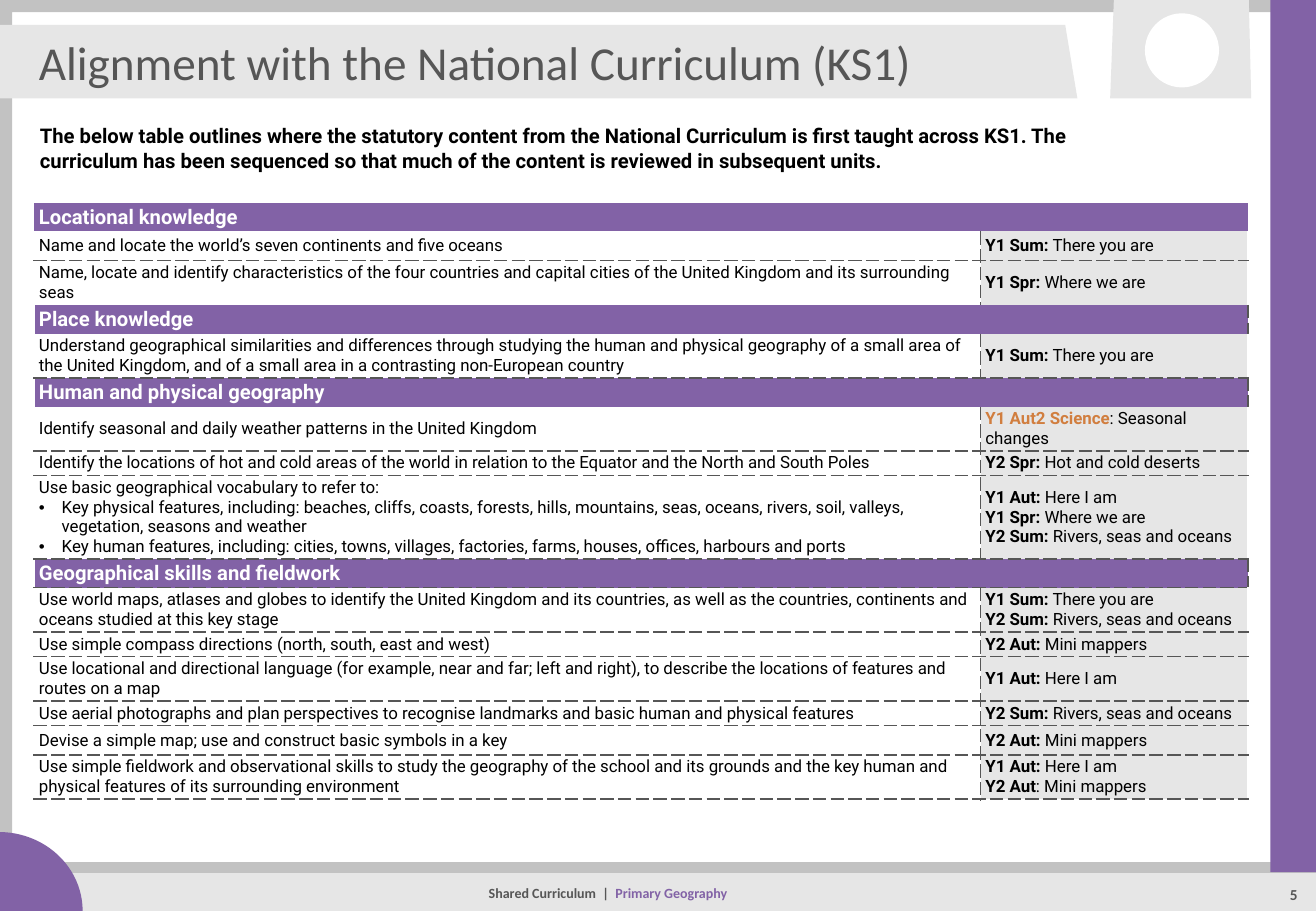
"""Builds the KS1 curriculum alignment slide."""
import dataclasses

import lxml.etree
import pptx
import pptx.dml.color
import pptx.enum.shapes
import pptx.enum.text
import pptx.oxml.ns
import pptx.util

Pt = pptx.util.Pt
qn = pptx.oxml.ns.qn
SHAPE = pptx.enum.shapes.MSO_SHAPE
ALIGN = pptx.enum.text.PP_ALIGN
ANCHOR = pptx.enum.text.MSO_ANCHOR


@dataclasses.dataclass(frozen=True)
class Theme:
    purple: str = "8262A6"
    orange: str = "D17E3F"
    dark: str = "565656"
    mid: str = "C2C2C2"
    light: str = "E6E6E6"
    white: str = "FFFFFF"
    black: str = "000000"
    heading: str = "Calibri"
    body: str = "Roboto"
    title_size: float = 28
    lead_size: float = 12
    cell_size: float = 10
    page_size: float = 9
    footer_size: float = 8.3


T = Theme()

THERE = ("Y1 Sum:", " There you are")
WHERE = ("Y1 Spr:", " Where we are")
HERE = ("Y1 Aut:", " Here I am")
RIVERS = ("Y2 Sum:", " Rivers, seas and oceans")
MAPPERS = ("Y2 Aut:", " Mini mappers")

# height, rule below, statement paragraphs, units (none for a section heading)
ROWS = [
    (17, False, ["Locational knowledge"], []),
    (17.3, True, ["Name and locate the world’s seven continents and five oceans"], [THERE]),
    (26.3, False, ["Name, locate and identify characteristics of the four countries and capital cities of the United Kingdom and its surrounding seas"], [WHERE]),
    (17, False, ["Place knowledge"], []),
    (26.3, True, ["Understand geographical similarities and differences through studying the human and physical geography of a small area of the United Kingdom, and of a small area in a contrasting non-European country"], [THERE]),
    (17, False, ["Human and physical geography"], []),
    (26.3, True, ["Identify seasonal and daily weather patterns in the United Kingdom"],
     [("Y1 Aut2 Science", ": Seasonal changes")]),
    (14.6, True, ["Identify the locations of hot and cold areas of the world in relation to the Equator and the North and South Poles"],
     [("Y2 Spr:", " Hot and cold deserts")]),
    (49.6, True, [
        "Use basic geographical vocabulary to refer to:",
        "Key physical features, including: beaches, cliffs, coasts, forests, hills, mountains, seas, oceans, rivers, soil, valleys, vegetation, seasons and weather",
        "Key human features, including: cities, towns, villages, factories, farms, houses, offices, harbours and ports",
    ], [HERE, WHERE, RIVERS]),
    (17, True, ["Geographical skills and fieldwork"], []),
    (26.3, True, ["Use world maps, atlases and globes to identify the United Kingdom and its countries, as well as the countries, continents and oceans studied at this key stage"], [THERE, RIVERS]),
    (14.6, True, ["Use simple compass directions (north, south, east and west)"], [MAPPERS]),
    (26.3, True, ["Use locational and directional language (for example, near and far; left and right), to describe the locations of features and routes on a map"], [HERE]),
    (14.6, True, ["Use aerial photographs and plan perspectives to recognise landmarks and basic human and physical features"], [RIVERS]),
    (17.3, True, ["Devise a simple map; use and construct basic symbols in a key"], [MAPPERS]),
    (26.3, True, ["Use simple fieldwork and observational skills to study the geography of the school and its grounds and the key human and physical features of its surrounding environment"],
     [HERE, ("Y2 Aut", ": Mini mappers")]),
]


def rgb(color):
    return pptx.dml.color.RGBColor.from_string(color)


def paint(sp, color):
    sp.fill.solid()
    sp.fill.fore_color.rgb = rgb(color)
    sp.line.fill.background()
    sp.shadow.inherit = False


def add_block(s, kind, box, color):
    paint(s.shapes.add_shape(kind, *map(Pt, box)), color)


def add_outline(s, contours, color):
    builder = None
    for start, *rest in contours:
        if builder is None:
            builder = s.shapes.build_freeform(*map(Pt, start), scale=1.0)
        else:
            builder.move_to(*map(Pt, start))
        builder.add_line_segments([tuple(map(Pt, point)) for point in rest], close=True)
    paint(builder.convert_to_shape(), color)


def add_rule(s, start, end, color, width):
    line = s.shapes.add_connector(pptx.enum.shapes.MSO_CONNECTOR.STRAIGHT, *map(Pt, start + end))
    line.line.color.rgb = rgb(color)
    line.line.width = Pt(width)
    lxml.etree.SubElement(line.element.spPr, qn("a:effectLst"))


def add_run(p, text, size, color=T.black, bold=False, font=T.body):
    r = p.add_run()
    r.text = text
    r.font.name, r.font.size, r.font.bold = font, Pt(size), bold
    r.font.color.rgb = rgb(color)


def add_text(s, box, align=ALIGN.LEFT, anchor=ANCHOR.TOP, spacing=1.0):
    tf = s.shapes.add_textbox(*map(Pt, box)).text_frame
    tf.word_wrap = True
    tf.vertical_anchor = anchor
    p = tf.paragraphs[0]
    p.alignment, p.line_spacing = align, spacing
    return p


def add_title(s, text):
    sp = s.shapes.title
    sp.element.getparent().append(sp.element)
    sp.left, sp.top, sp.width, sp.height = map(Pt, (15.8, 18.7, 634, 36))
    sp.text_frame.vertical_anchor = ANCHOR.MIDDLE
    p = sp.text_frame.paragraphs[0]
    p.alignment = ALIGN.LEFT
    add_run(p, text, T.title_size, T.dark, font=T.heading)


def set_bullet(p):
    pPr = p._p.get_or_add_pPr()
    pPr.set("marL", str(Pt(13.5)))
    pPr.set("indent", str(Pt(-13.5)))
    lxml.etree.SubElement(pPr, qn("a:buFont"), typeface="Arial")
    lxml.etree.SubElement(pPr, qn("a:buChar"), char="•")


def set_border(cell, side, color):
    ln = lxml.etree.SubElement(cell._tc.get_or_add_tcPr(), qn("a:ln" + side), w=str(Pt(1)))
    if color is None:
        lxml.etree.SubElement(ln, qn("a:noFill"))
        return
    fill = lxml.etree.SubElement(ln, qn("a:solidFill"))
    lxml.etree.SubElement(fill, qn("a:srgbClr"), val=color)
    dash = "sysDash" if color == T.dark else "solid"
    lxml.etree.SubElement(ln, qn("a:prstDash"), val=dash)


def format_cell(cell, fill, borders):
    cell.margin_left = cell.margin_right = Pt(2.9)
    cell.margin_top = cell.margin_bottom = Pt(1.45)
    cell.vertical_anchor = ANCHOR.MIDDLE
    for side, color in zip("LRTB", borders):
        set_border(cell, side, color)
    cell.fill.solid()
    cell.fill.fore_color.rgb = rgb(fill)


def paragraphs(cell, items):
    tf = cell.text_frame
    for i, item in enumerate(items):
        yield (tf.add_paragraph() if i else tf.paragraphs[0]), item


def add_curriculum_table(s):
    height = sum(row[0] for row in ROWS)
    table = s.shapes.add_table(len(ROWS), 2, *map(Pt, (20.2, 120.2, 719.4, height))).table
    table.first_row = table.horz_banding = False
    table.columns[0].width, table.columns[1].width = Pt(561), Pt(158.4)
    above = None
    for i, (height, ruled, statements, units) in enumerate(ROWS):
        table.rows[i].height = Pt(height)
        left, right = table.cell(i, 0), table.cell(i, 1)
        below = T.dark if ruled else None
        if not units:
            left.merge(right)
            sides = (T.white, T.dark) if i else (None, None)
            format_cell(left, T.purple, (*sides, above, below))
            add_run(left.text_frame.paragraphs[0], statements[0], T.lead_size, T.white, True)
        else:
            format_cell(left, T.white, (T.white, T.dark, above, below))
            format_cell(right, T.light, (T.dark, T.white, above, below))
            for p, text in paragraphs(left, statements):
                if text != statements[0]:
                    set_bullet(p)
                add_run(p, text, T.cell_size)
            for p, (term, unit) in paragraphs(right, units):
                add_run(p, term, T.cell_size, T.orange if "Science" in term else T.black, True)
                add_run(p, unit, T.cell_size)
        above = below


def add_frame(s):
    add_outline(s, [[(0, 0), (780, 0), (780, 540), (0, 540)],
                    [(7.2, 7.2), (7.2, 533.5), (772.5, 533.5), (772.5, 7.2)]], T.mid)
    add_block(s, SHAPE.RECTANGLE, (23, 517, 757, 23), T.light)
    add_rule(s, (3.6, 514.2), (780, 514.2), T.mid, 7)
    add_block(s, SHAPE.ARC, (-50.4, 493.2, 99.4, 93.6), T.purple)
    add_outline(s, [[(658, 58.3), (741.6, 58.3), (740.2, 0), (660.2, 0)]], T.light)
    add_block(s, SHAPE.OVAL, (678.6, 7.9, 43.9, 43.9), T.white)
    add_outline(s, [[(0, 14.8), (0, 58.3), (638.6, 58.3), (631.4, 14.8)]], T.light)
    add_block(s, SHAPE.RECTANGLE, (753, 0, 27, 517), T.purple)


def main():
    prs = pptx.Presentation()
    prs.slide_width, prs.slide_height = Pt(780), Pt(540)
    s = prs.slides.add_slide(prs.slide_layouts[5])
    add_frame(s)
    p = add_text(s, (147.6, 519, 425.5, 21.6), ALIGN.CENTER, ANCHOR.MIDDLE, 0.9)
    add_run(p, "Shared Curriculum  |  ", T.footer_size, T.dark, True, T.heading)
    add_run(p, "Primary Geography", T.footer_size, T.purple, True, T.heading)
    p = add_text(s, (743.8, 519, 46, 20), ALIGN.CENTER, spacing=1.2)
    add_run(p, "5", T.page_size, T.dark, True, T.heading)
    add_title(s, "Alignment with the National Curriculum (KS1)")
    add_curriculum_table(s)
    p = add_text(s, (16.6, 69.8, 653, 36))
    add_run(p, "The below table outlines where the statutory content from the National Curriculum is first taught across KS1. The curriculum has been sequenced so that much of the content is reviewed in subsequent units.", T.lead_size, bold=True)
    prs.save("out.pptx")


if __name__ == "__main__":
    main()
